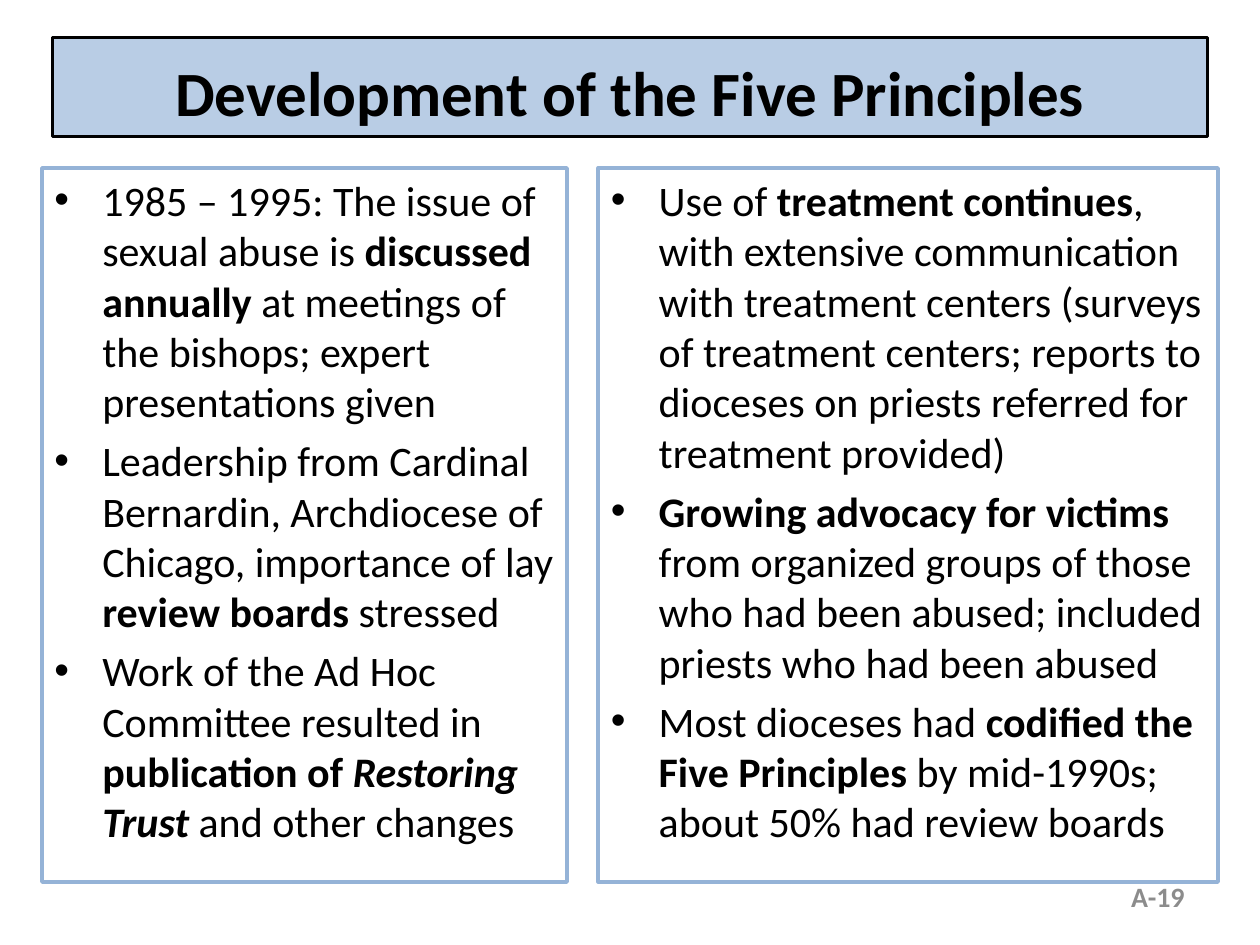
from lxml import etree
from pptx import Presentation
from pptx.dml.color import RGBColor
from pptx.enum.shapes import MSO_SHAPE
from pptx.enum.text import MSO_ANCHOR, PP_ALIGN
from pptx.oxml.ns import qn
from pptx.util import Inches, Pt

RECTANGLE = MSO_SHAPE.RECTANGLE
TOP, MIDDLE = MSO_ANCHOR.TOP, MSO_ANCHOR.MIDDLE
LEFT, CENTER, RIGHT = PP_ALIGN.LEFT, PP_ALIGN.CENTER, PP_ALIGN.RIGHT

CELL = Inches(1) / 12  # the page is 120 columns by 90 rows
BLACK, GRAY, PALE_BLUE, BLUE = "000000", "8C8C8C", "B9CDE5", "95B3D7"
BOLD = {"bold": True}
BOLD_ITALIC = {"bold": True, "italic": True}

HISTORY = [
    [("1985 – 1995: The issue of sexual abuse is ", {}), ("discussed annually ", BOLD),
     ("at meetings of the bishops; expert presentations given", {})],
    [("Leadership from Cardinal Bernardin, Archdiocese of Chicago, importance of lay ", {}),
     ("review boards ", BOLD), ("stressed", {})],
    [("Work of the Ad Hoc Committee resulted in ", {}), ("publication of ", BOLD),
     ("Restoring Trust ", BOLD_ITALIC), ("and other changes", {})],
]
RESPONSE = [
    [("Use of ", {}), ("treatment continues", BOLD),
     (", with extensive communication with treatment centers (surveys of treatment centers; "
      "reports to dioceses on priests referred for treatment provided)", {})],
    [("Growing advocacy for victims ", BOLD),
     ("from organized groups of those who had been abused; "
      "included priests who had been abused", {})],
    [("Most dioceses had ", {}), ("codified the Five Principles ", BOLD),
     ("by mid-1990s; about 50% had review boards", {})],
]


def color(value):
    return RGBColor.from_string(value)


def set_values(target, values):
    for name, value in values.items():
        setattr(target, name, value)


class SlideBuilder:
    """Holds the text style and the page being filled; areas are (column, row, columns, rows)."""

    font = "Calibri"

    def __init__(self, page):
        self.page = page

    def place(self, area):
        return [round(cells * CELL) for cells in area]

    def add_spans(self, para, spans, size, text_color=BLACK):
        for text, style in spans:
            span = para.add_run()
            span.text = text
            set_values(span.font, {"name": self.font, "size": Pt(size), **style})
            span.font.color.rgb = color(text_color)

    def panel(self, area, line, width, fill=None):
        box = self.page.shapes.add_shape(RECTANGLE, *self.place(area))
        box.shadow.inherit = False
        if fill:
            box.fill.solid()
            box.fill.fore_color.rgb = color(fill)
        else:
            box.fill.background()
        box.line.color.rgb = color(line)
        box.line.width = Pt(width)
        return box.text_frame

    def title(self, area, text):
        frame = self.panel(area, BLACK, 1.5, PALE_BLUE)
        set_values(frame, {"word_wrap": True, "vertical_anchor": MIDDLE,
                           "margin_top": Inches(0.11)})
        para = frame.paragraphs[0]
        para.alignment = CENTER
        self.add_spans(para, [(text, BOLD)], 36)

    def bullet_list(self, area, items):
        frame = self.panel(area, BLUE, 2.25)
        set_values(frame, {"word_wrap": True, "vertical_anchor": TOP})
        for index, spans in enumerate(items):
            para = frame.add_paragraph() if index else frame.paragraphs[0]
            set_values(para, {"alignment": LEFT, "space_before": Pt(4.8)})
            self.add_bullet(para)
            self.add_spans(para, spans, 24)

    def add_bullet(self, para):
        indent = Inches(0.38)
        properties = para._p.get_or_add_pPr()
        properties.set("marL", str(indent))
        properties.set("indent", str(-indent))
        etree.SubElement(properties, qn("a:buFont"), typeface="Arial")
        etree.SubElement(properties, qn("a:buChar"), char="•")

    def page_number(self, area, text):
        frame = self.page.shapes.add_textbox(*self.place(area)).text_frame
        set_values(frame, {"word_wrap": True, "vertical_anchor": MIDDLE})
        para = frame.paragraphs[0]
        para.alignment = RIGHT
        self.add_spans(para, [(text, BOLD)], 16, GRAY)


def main():
    deck = Presentation()
    set_values(deck, {"slide_width": Inches(10), "slide_height": Inches(7.5)})
    builder = SlideBuilder(deck.slides.add_slide(deck.slide_layouts[6]))
    builder.title((5, 3.6, 110, 9.4), "Development of the Five Principles")
    builder.bullet_list((4, 16, 50, 68), HISTORY)
    builder.bullet_list((57, 16, 59, 68), RESPONSE)
    builder.page_number((86, 83, 28, 4.8), "A-19")
    deck.save("out.pptx")


if __name__ == "__main__":
    main()
